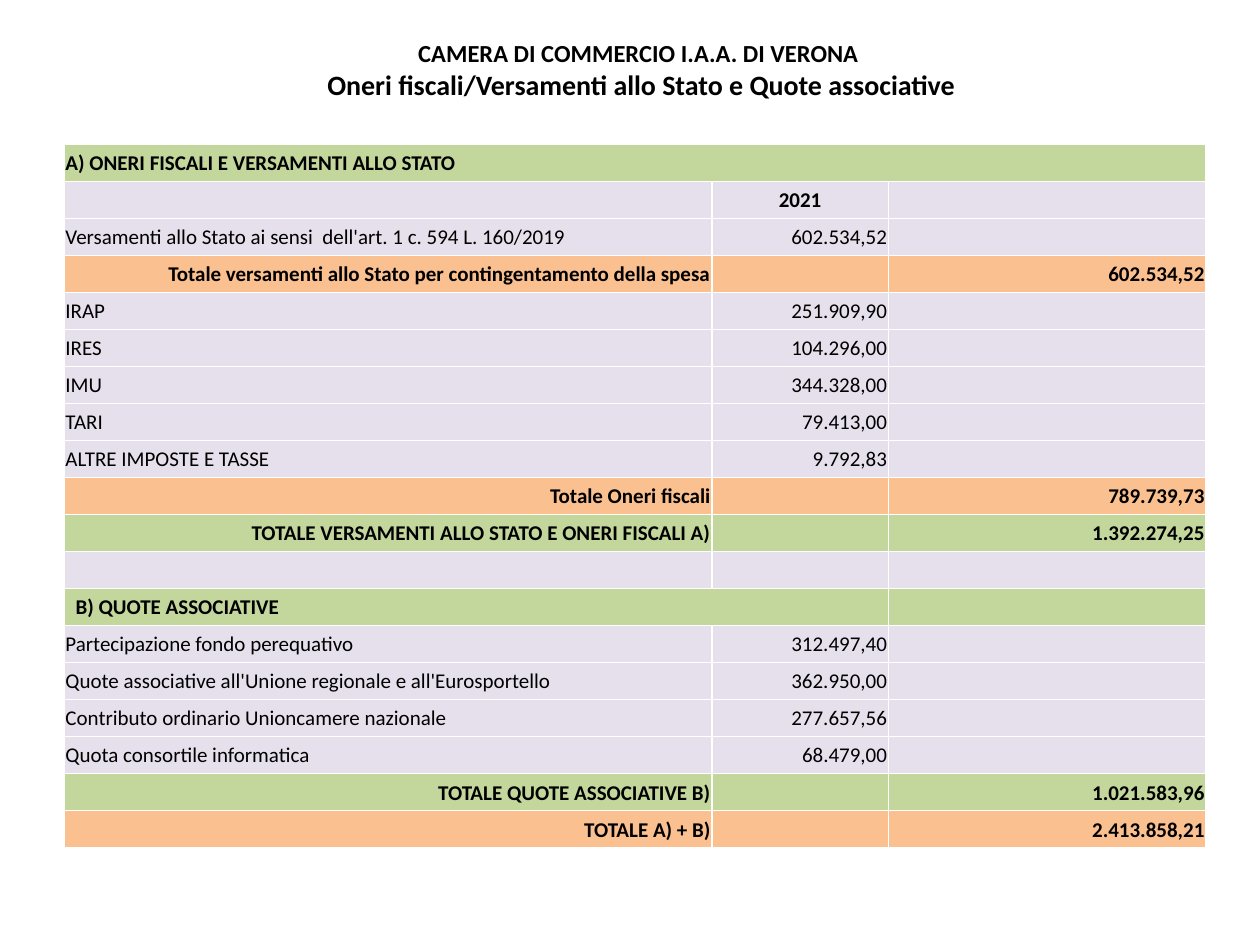
from dataclasses import dataclass

from lxml import etree
from pptx import Presentation
from pptx import util as u
from pptx.dml.color import RGBColor
from pptx.enum import text
from pptx.oxml import ns

LEFT, CENTER, RIGHT = text.PP_ALIGN.LEFT, text.PP_ALIGN.CENTER, text.PP_ALIGN.RIGHT


@dataclass(frozen=True)
class Theme:
    """Colours, font and type sizes of the deck."""
    font: str = "Calibri"
    ink: str = "000000"
    rule: str = "FFFFFF"
    plain: str = "E6E0EC"
    green: str = "C3D69B"
    orange: str = "FAC090"
    heading: int = 14
    title: int = 16
    body: int = 12


THEME = Theme()
TITLE_BOX = (0.059, 0.017, 0.9, 0.113)
TABLE_BOX = (0.051, 0.153, 0.906, 0.745)
COLUMNS = (5.14, 1.4, 2.52)
TITLE_LINES = (
    ("CAMERA DI COMMERCIO I.A.A. DI VERONA ", THEME.heading),
    ("Oneri fiscali/Versamenti allo Stato e Quote associative", THEME.title),
)
ROWS = (
    ("section", "A) ONERI FISCALI E VERSAMENTI ALLO STATO", 3, 0),
    ("year", "2021"),
    ("item", "Versamenti allo Stato ai sensi  dell'art. 1 c. 594 L. 160/2019", "602.534,52"),
    ("subtotal", "Totale versamenti allo Stato per contingentamento della spesa", "602.534,52"),
    ("item", "IRAP", "251.909,90"),
    ("item", "IRES", "104.296,00"),
    ("item", "IMU", "344.328,00"),
    ("item", "TARI", "79.413,00"),
    ("item", "ALTRE IMPOSTE E TASSE", "9.792,83"),
    ("subtotal", "Totale Oneri fiscali", "789.739,73"),
    ("total", "TOTALE VERSAMENTI ALLO STATO E ONERI FISCALI A)", "1.392.274,25"),
    ("gap",),
    ("section", "B) QUOTE ASSOCIATIVE", 2, 0.08),
    ("item", "Partecipazione fondo perequativo", "312.497,40"),
    ("item", "Quote associative all'Unione regionale e all'Eurosportello", "362.950,00"),
    ("item", "Contributo ordinario Unioncamere nazionale", "277.657,56"),
    ("item", "Quota consortile informatica", "68.479,00"),
    ("total", "TOTALE QUOTE ASSOCIATIVE B)", "1.021.583,96"),
    ("subtotal", "TOTALE A) + B)", "2.413.858,21"),
)
FILLS = {"section": THEME.green, "total": THEME.green, "subtotal": THEME.orange}
PLACES = {
    "section": ((0, LEFT),),
    "year": ((1, CENTER),),
    "item": ((0, LEFT), (1, RIGHT)),
    "subtotal": ((0, RIGHT), (2, RIGHT)),
    "total": ((0, RIGHT), (2, RIGHT)),
    "gap": (),
}


def apply(target, values):
    """Set each named attribute on the target."""
    for name, value in values.items():
        setattr(target, name, value)


def to_lengths(deck, box):
    """Turn shares of the slide into left, top, width and height."""
    sides = (deck.slide_width, deck.slide_height) * 2
    return [u.Emu(round(share * side)) for share, side in zip(box, sides)]


def write(para, words, size, bold, align):
    """Add one formatted span to a paragraph."""
    para.alignment = align
    span = para.add_run()
    span.text = words
    apply(span.font, {"name": THEME.font, "size": u.Pt(size), "bold": bold})
    span.font.color.rgb = RGBColor.from_string(THEME.ink)


def place_title(title, box):
    """Place the two-line heading in its box."""
    apply(title, dict(zip(("left", "top", "width", "height"), box)))
    frame = title.text_frame
    apply(frame, {"word_wrap": True, "auto_size": text.MSO_AUTO_SIZE.NONE,
                  "vertical_anchor": text.MSO_ANCHOR.MIDDLE})
    para = frame.paragraphs[0]
    for index, (words, size) in enumerate(TITLE_LINES):
        if index:
            para.add_line_break()
        write(para, words, size, True, CENTER)


def format_cell(cell, colour):
    """Give a cell its borders, fill, margins and type size."""
    props = cell._tc.get_or_add_tcPr()
    for side in ("a:lnL", "a:lnR", "a:lnT", "a:lnB"):
        line = etree.SubElement(props, ns.qn(side), w=str(u.Pt(1)))
        paint = etree.SubElement(line, ns.qn("a:solidFill"))
        etree.SubElement(paint, ns.qn("a:srgbClr"), val=THEME.rule)
    cell.fill.solid()
    cell.fill.fore_color.rgb = RGBColor.from_string(colour)
    edge = u.Inches(0.01)
    apply(cell, {"margin_left": edge, "margin_right": edge, "margin_top": edge,
                 "margin_bottom": 0, "vertical_anchor": text.MSO_ANCHOR.MIDDLE})
    end = cell.text_frame.paragraphs[0]._p.get_or_add_endParaRPr()
    end.set("sz", str(THEME.body * 100))


def place_table(slide, box):
    """Place the table of charges in its box."""
    left, top, width, height = box
    table = slide.shapes.add_table(len(ROWS), len(COLUMNS), *box).table
    apply(table, {"first_row": False, "horz_banding": False})
    for column, share in zip(table.columns, COLUMNS):
        column.width = round(width * share / sum(COLUMNS))
    for index, (kind, *values) in enumerate(ROWS):
        table.rows[index].height = height // len(ROWS)
        cells = [table.cell(index, number) for number in range(len(COLUMNS))]
        for cell in cells:
            format_cell(cell, FILLS.get(kind, THEME.plain))
        for (number, align), words in zip(PLACES[kind], values):
            para = cells[number].text_frame.paragraphs[0]
            write(para, words, THEME.body, kind != "item", align)
        if kind == "section":
            span_count, indent = values[1:]
            cells[0].merge(cells[span_count - 1])
            cells[0].margin_left += u.Inches(indent)


def main():
    """Build the deck and save it."""
    deck = Presentation()
    apply(deck, {"slide_width": u.Inches(10), "slide_height": u.Inches(7.5)})
    slide = deck.slides.add_slide(deck.slide_layouts[5])
    place_title(slide.shapes.title, to_lengths(deck, TITLE_BOX))
    place_table(slide, to_lengths(deck, TABLE_BOX))
    deck.save("out.pptx")


if __name__ == "__main__":
    main()
